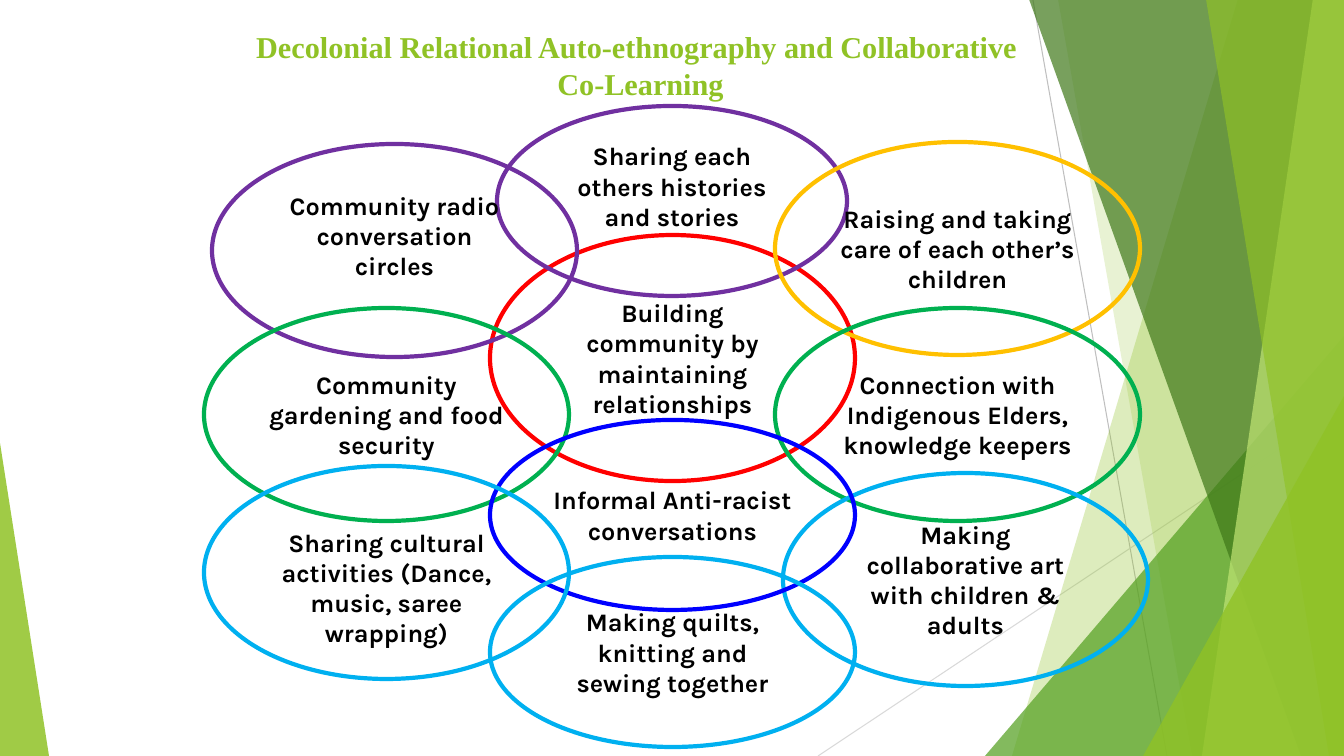
from lxml import etree
from pptx import Presentation
from pptx import util as u
from pptx.dml.color import RGBColor
from pptx.enum import shapes, text
from pptx.oxml.ns import qn

PX = 9071.43  # EMU in one px, at 100.8 px to the inch
WIDTH, HEIGHT = 1344, 756
COLORS = {
    "leaf": "90C226", "grass": "54A021", "forest": "3F7819", "lime": "C0E474",
    "silver": "BFBFBF", "mist": "D9D9D9", "black": "000000",
    "red": "FF0000", "purple": "7030A0", "amber": "FFC000",
    "green": "00B050", "sky": "00B0F0", "blue": "0000FF",
}


def px(*lengths):
    return [u.Emu(round(length * PX)) for length in lengths]


def style_font(font, name, size, color):
    font.name, font.size, font.bold = name, u.Pt(size), True
    font.color.rgb = RGBColor.from_string(COLORS[color])


deck = Presentation()
deck.slide_width, deck.slide_height = px(WIDTH, HEIGHT)
page = deck.slides.add_slide(deck.slide_layouts[5])

# Thin lines behind the green facets
for ends, color in [((1033, 0, 1167, 756), "silver"), ((1344, 406, 818, 756), "mist")]:
    line = page.shapes.add_connector(shapes.MSO_CONNECTOR.STRAIGHT, *px(*ends))
    line.line.color.rgb = RGBColor.from_string(COLORS[color])
    line.line.width = u.Pt(0.75)
    etree.SubElement(line._element.spPr, qn("a:effectLst"))

# Facets: a band has (top left x, bottom left x) and runs to the right edge;
# a triangle has (left, top, width, height) and the position of its apex
facets = [
    ("band", (1238, 1012), None, "leaf", 30),
    ("band", (1058, 1192), None, "leaf", 20),
    ("triangle", (985, 336, 359, 420), 1, "grass", 72),
    ("band", (1029, 1301), None, "forest", 70),
    ("band", (1313, 1202), None, "lime", 70),
    ("band", (1206, 1329), None, "leaf", 65),
    ("triangle", (1143, 396, 201, 360), 1, "leaf", 80),
    ("triangle", (0, 443, 49, 313), 0, "leaf", 85),
]
for kind, place, apex, color, opacity in facets:
    if kind == "band":
        top_x, bottom_x = place
        outline = page.shapes.build_freeform(top_x, -1, scale=PX)
        outline.add_line_segments([(WIDTH, -1), (WIDTH, HEIGHT), (bottom_x, HEIGHT)], close=True)
        facet = outline.convert_to_shape()
    else:
        facet = page.shapes.add_shape(shapes.MSO_SHAPE.ISOSCELES_TRIANGLE, *px(*place))
        facet.adjustments[0] = apex
    facet.shadow.inherit = False
    facet.line.fill.background()
    facet.fill.solid()
    facet.fill.fore_color.rgb = RGBColor.from_string(COLORS[color])
    tint = facet._element.spPr.find(qn("a:solidFill"))[0]
    etree.SubElement(tint, qn("a:alpha"), val=str(opacity * 1000))

# Title, brought in front of the facets
title = page.shapes.title
title.element.getparent().append(title.element)
title.left, title.top, title.width, title.height = px(212, 23, 857, 84)
title.text_frame.text = "Decolonial Relational Auto-ethnography and Collaborative \vCo-Learning"
title.text_frame.word_wrap = True
title.text_frame.vertical_anchor = text.MSO_ANCHOR.MIDDLE
para = title.text_frame.paragraphs[0]
para.alignment = text.PP_ALIGN.CENTER
style_font(para.font, "Times New Roman", 21.6, "leaf")

# Overlapping ovals: left, top, width, height, colour, extra top and bottom margin, wording
ovals = [
    (490, 235, 365, 246, "red", 0, 0, "Building community by maintaining relationships"),
    (497, 106, 350, 190, "purple", 0, 30, "Sharing each others histories and stories"),
    (775, 142, 365, 213, "amber", 0, 0, "Raising and taking care of each other’s children"),
    (212, 144, 365, 213, "purple", 0, 30, "Community radio conversation circles"),
    (204, 308, 365, 213, "green", 0, 0, "Community gardening and food security"),
    (775, 308, 365, 213, "green", 0, 0, "Connection with Indigenous Elders, knowledge keepers"),
    (783, 473, 365, 213, "sky", 0, 0, "Making collaborative art with children & adults"),
    (490, 420, 365, 190, "blue", 0, 0, "Informal Anti-racist conversations"),
    (490, 557, 365, 190, "sky", 0, 0, "Making quilts, knitting and sewing together"),
    (204, 466, 365, 213, "sky", 30, 0, "Sharing cultural activities (Dance, music, saree wrapping)"),
]
for left, top, width, height, color, above, below, wording in ovals:
    oval = page.shapes.add_shape(shapes.MSO_SHAPE.OVAL, *px(left, top, width, height))
    oval.shadow.inherit = False
    oval.fill.background()
    oval.line.color.rgb = RGBColor.from_string(COLORS[color])
    oval.line.width = u.Pt(3)
    frame = oval.text_frame
    frame.word_wrap = True
    frame.vertical_anchor = text.MSO_ANCHOR.MIDDLE
    frame.margin_top, frame.margin_bottom = px(5 + above, 5 + below)
    frame.text = wording
    para = frame.paragraphs[0]
    para.alignment = text.PP_ALIGN.CENTER
    style_font(para.font, "Karla", 18, "black")

deck.save("out.pptx")
